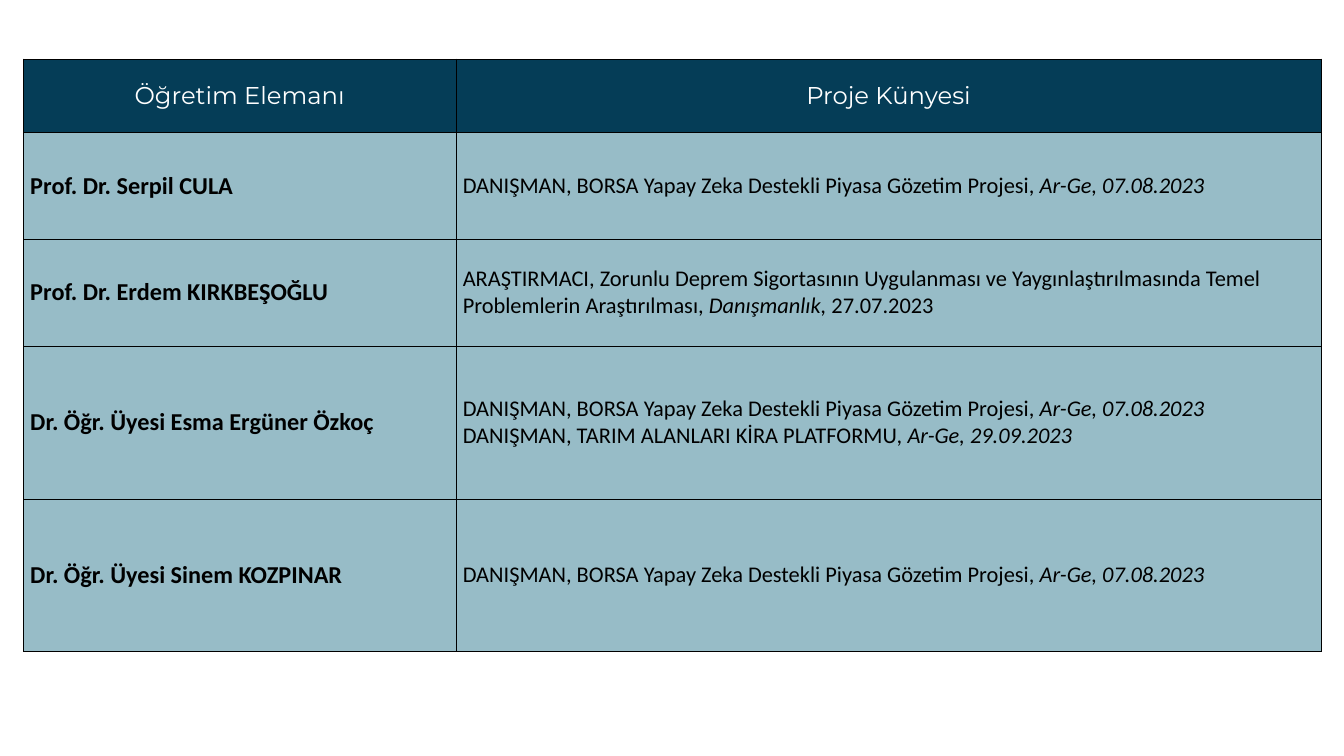
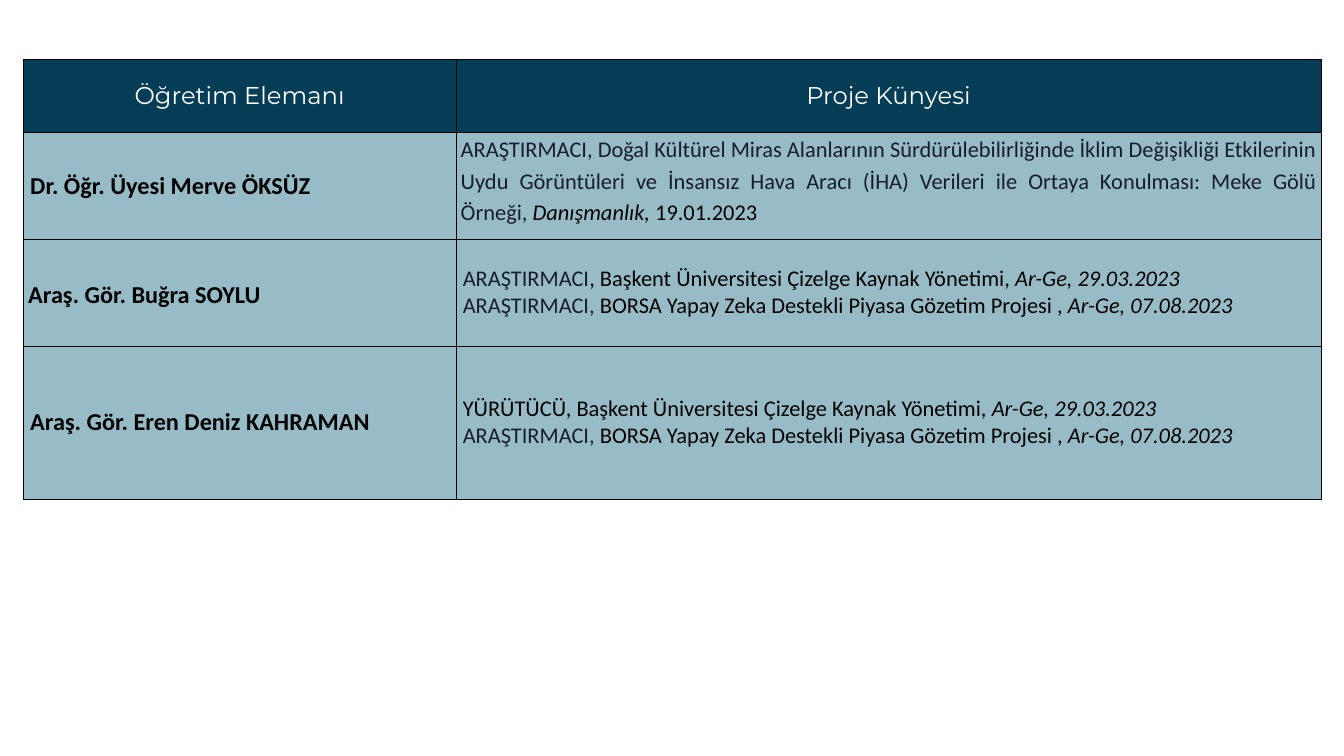
from dataclasses import dataclass, field

from lxml import etree
from pptx import Presentation
from pptx.dml.color import RGBColor
from pptx.enum.text import MSO_ANCHOR, PP_ALIGN
from pptx.oxml.ns import qn
from pptx.util import Inches, Pt

MIDDLE, TOP = MSO_ANCHOR.MIDDLE, MSO_ANCHOR.TOP
CENTER, JUSTIFY, LEFT = PP_ALIGN.CENTER, PP_ALIGN.JUSTIFY, PP_ALIGN.LEFT
BLANK_LAYOUT = 6


@dataclass(frozen=True)
class Theme:
    header_fill: str = "053D57"
    body_fill: str = "97BCC7"
    header_text: str = "FFFFFF"
    text: str = "000000"
    role_text: str = "181C32"
    border: str = "000000"
    border_width: int = Pt(1)
    header_font: str = "Montserrat"
    body_font: str = "Calibri"
    name_size: int = Pt(26)
    project_size: int = Pt(24)


THEME = Theme()
SLIDE_WIDTH, SLIDE_HEIGHT = Inches(20), Inches(11.25)

# Table grid: positions and row heights in percent of the slide's size
TABLE_LEFT, TABLE_TOP, TABLE_WIDTH = 1.75, 7.82, 96.55
COLUMN_PARTS = (1, 2)
HEADER_ROW, LOW_ROW, HIGH_ROW, LAST_ROW = 9.69, 14.13, 20.27, 20.09
HEADINGS = ("Öğretim Elemanı", "Proje Künyesi")


@dataclass(frozen=True)
class Span:
    text: str
    color: str = THEME.text
    italic: bool = False


@dataclass(frozen=True)
class CellStyle:
    alignment: int = LEFT
    anchor: int = MIDDLE
    spaced: bool = False


@dataclass(frozen=True)
class Member:
    name: str
    projects: list
    row_height: float
    name_style: CellStyle = field(default_factory=CellStyle)
    project_style: CellStyle = field(default_factory=CellStyle)


def italic(text):
    return Span(text, italic=True)


def role(text):
    return Span(text, THEME.role_text)


MARKET_TITLE = "BORSA Yapay Zeka Destekli Piyasa Gözetim Projesi"
SCHEDULE_TITLE = ", Başkent Üniversitesi Çizelge Kaynak Yönetimi, "
MARKET_DATE = italic("Ar-Ge, 07.08.2023")
SCHEDULE_DATE = italic("Ar-Ge, 29.03.2023")
CONSULTING = italic("Danışmanlık, ")

MARKET_ADVISOR = [Span(f"DANIŞMAN, {MARKET_TITLE}, "), MARKET_DATE]
MARKET_RESEARCHER = [role("ARAŞTIRMACI, "), Span(f"{MARKET_TITLE} , "), MARKET_DATE]

SENIOR_MEMBERS = [
    Member("Prof. Dr. Serpil CULA", [MARKET_ADVISOR], LOW_ROW),
    Member("Prof. Dr. Erdem KIRKBEŞOĞLU", [
        [Span("ARAŞTIRMACI, Zorunlu Deprem Sigortasının Uygulanması ve "
              "Yaygınlaştırılmasında Temel Problemlerin Araştırılması, "),
         CONSULTING, Span("27.07.2023")],
    ], LOW_ROW),
    Member("Dr. Öğr. Üyesi Esma Ergüner Özkoç", [
        MARKET_ADVISOR,
        [Span("DANIŞMAN, TARIM ALANLARI KİRA PLATFORMU, "),
         italic("Ar-Ge, 29.09.2023")],
    ], HIGH_ROW),
    Member("Dr. Öğr. Üyesi Sinem KOZPINAR", [MARKET_ADVISOR], LAST_ROW),
]

JUNIOR_MEMBERS = [
    Member("Dr. Öğr. Üyesi Merve ÖKSÜZ", [
        [role("ARAŞTIRMACI, Doğal Kültürel Miras Alanlarının "
              "Sürdürülebilirliğinde İklim Değişikliği Etkilerinin Uydu "
              "Görüntüleri ve İnsansız Hava Aracı (İHA) Verileri ile Ortaya "
              "Konulması: Meke Gölü Örneği, "),
         CONSULTING, Span("19.01.2023")],
    ], LOW_ROW, project_style=CellStyle(JUSTIFY, TOP, spaced=True)),
    Member("Araş. Gör. Buğra SOYLU", [
        [role("ARAŞTIRMACI"), Span(SCHEDULE_TITLE), SCHEDULE_DATE],
        MARKET_RESEARCHER,
    ], LOW_ROW, name_style=CellStyle(spaced=True)),
    Member("Araş. Gör. Eren Deniz KAHRAMAN", [
        [Span("YÜRÜTÜCÜ" + SCHEDULE_TITLE), SCHEDULE_DATE],
        MARKET_RESEARCHER,
    ], HIGH_ROW),
]


def across(percent):
    return round(SLIDE_WIDTH * percent / 100)


def down(percent):
    return round(SLIDE_HEIGHT * percent / 100)


def add_borders(cell):
    properties = cell._tc.get_or_add_tcPr()
    for index, side in enumerate(("a:lnL", "a:lnR", "a:lnT", "a:lnB")):
        line = etree.Element(qn(side), w=str(THEME.border_width))
        fill = etree.SubElement(line, qn("a:solidFill"))
        etree.SubElement(fill, qn("a:srgbClr"), val=THEME.border)
        properties.insert(index, line)


def fill_cell(cell, lines, fill, font_name, size, bold=False, style=CellStyle()):
    """Write one paragraph for each list of spans and style the cell."""
    cell.fill.solid()
    cell.fill.fore_color.rgb = RGBColor.from_string(fill)
    add_borders(cell)
    cell.vertical_anchor = style.anchor
    if style.spaced:
        cell.margin_left = cell.margin_right = Inches(0.07)
        cell.margin_top = cell.margin_bottom = 0
    frame = cell.text_frame
    for index, spans in enumerate(lines):
        paragraph = frame.add_paragraph() if index else frame.paragraphs[0]
        paragraph.alignment = style.alignment
        if style.spaced:
            paragraph.line_spacing = 1.15
            paragraph.space_after = Pt(10)
        paragraph.font.name = font_name
        paragraph.font.size = size
        paragraph.font.bold = bold
        for span in spans:
            run = paragraph.add_run()
            run.text = span.text
            run.font.color.rgb = RGBColor.from_string(span.color)
            if span.italic:
                run.font.italic = True


def add_project_table(slide, members):
    heights = [down(HEADER_ROW)] + [down(member.row_height) for member in members]
    table = slide.shapes.add_table(
        len(heights), len(COLUMN_PARTS), across(TABLE_LEFT), down(TABLE_TOP),
        across(TABLE_WIDTH), sum(heights)).table
    table.first_row = table.horz_banding = False
    for column, part in zip(table.columns, COLUMN_PARTS):
        column.width = across(TABLE_WIDTH * part / sum(COLUMN_PARTS))
    for row, height in zip(table.rows, heights):
        row.height = height

    for column_index, heading in enumerate(HEADINGS):
        fill_cell(table.cell(0, column_index), [[Span(heading, THEME.header_text)]],
                  THEME.header_fill, THEME.header_font, THEME.name_size,
                  style=CellStyle(CENTER))
    for row_index, member in enumerate(members, start=1):
        fill_cell(table.cell(row_index, 0), [[Span(member.name)]],
                  THEME.body_fill, THEME.body_font, THEME.name_size,
                  bold=True, style=member.name_style)
        fill_cell(table.cell(row_index, 1), member.projects,
                  THEME.body_fill, THEME.body_font, THEME.project_size,
                  style=member.project_style)


def main():
    presentation = Presentation()
    presentation.slide_width = SLIDE_WIDTH
    presentation.slide_height = SLIDE_HEIGHT
    for members in (SENIOR_MEMBERS, JUNIOR_MEMBERS):
        slide = presentation.slides.add_slide(presentation.slide_layouts[BLANK_LAYOUT])
        add_project_table(slide, members)
    presentation.save("out.pptx")


if __name__ == "__main__":
    main()
